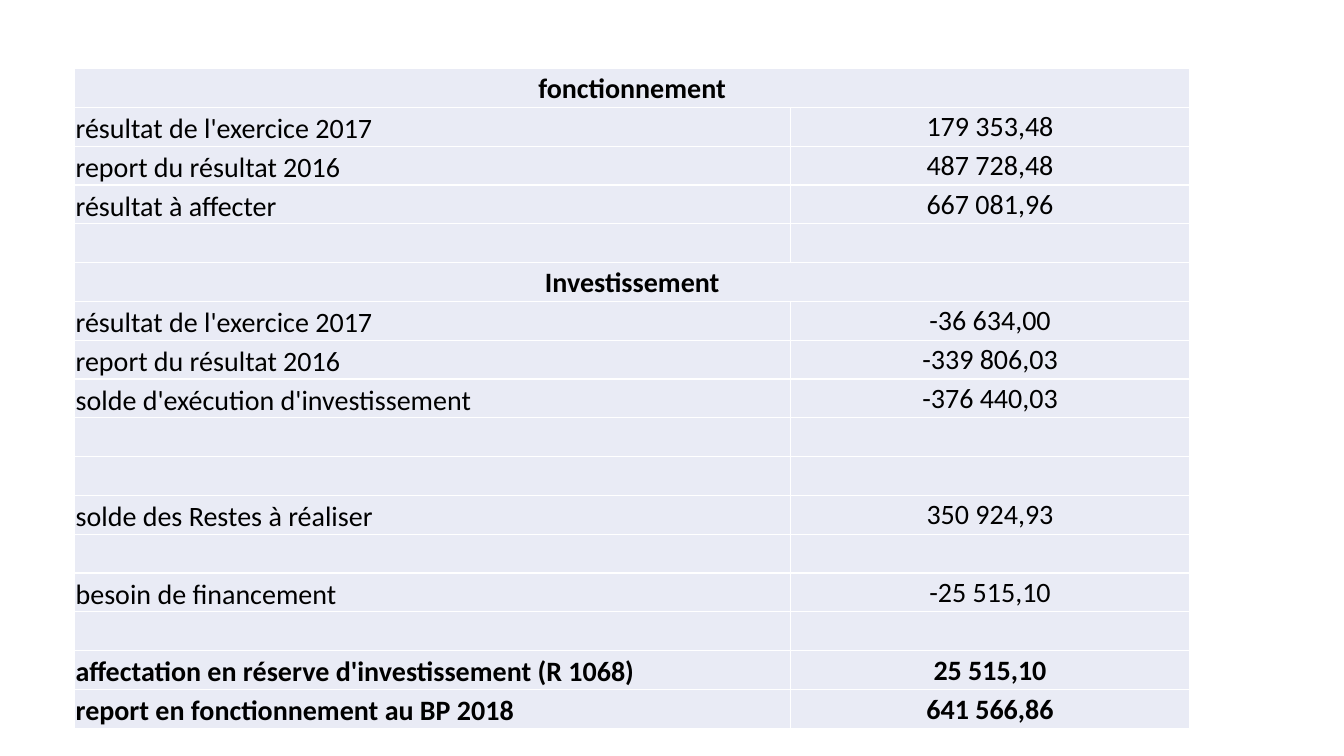
from lxml import etree
from pptx import Presentation
from pptx import util as u
from pptx.dml.color import RGBColor
from pptx.enum import text
from pptx.oxml import ns

COLORS = {"text": "000000", "cell": "E9EBF5", "border": "FFFFFF"}
FONT = "Calibri"
ROW_HEIGHT = 6.55 / 17
COLUMN_WIDTHS = (7.1, 3.96)

# Label, amount, bold; a row with a label and no amount is a section heading.
BUDGET_ROWS = [
    ("fonctionnement", "", True),
    ("résultat de l'exercice 2017", "179 353,48", False),
    ("report du résultat 2016", "487 728,48", False),
    ("résultat à affecter", "667 081,96", False),
    ("", "", False),
    ("Investissement", "", True),
    ("résultat de l'exercice 2017", "-36 634,00", False),
    ("report du résultat 2016", "-339 806,03", False),
    ("solde d'exécution d'investissement", "-376 440,03", False),
    ("", "", False),
    ("", "", False),
    ("solde des Restes à réaliser", "350 924,93", False),
    ("", "", False),
    ("besoin de financement", "-25 515,10", False),
    ("", "", False),
    ("affectation en réserve d'investissement (R 1068)", "25 515,10", True),
    ("report en fonctionnement au BP 2018", "641 566,86", True),
]


def write_text(cell, wording, size=20, bold=False, centred=False):
    """Centred wording sits mid-cell; other wording sits at the bottom left."""
    cell.vertical_anchor = text.MSO_ANCHOR.MIDDLE if centred else text.MSO_ANCHOR.BOTTOM
    paragraph = cell.text_frame.paragraphs[0]
    paragraph.alignment = text.PP_ALIGN.CENTER if centred else text.PP_ALIGN.LEFT
    run = paragraph.add_run()
    run.text = wording
    run.font.name = FONT
    run.font.size = u.Pt(size)
    run.font.bold = bold
    run.font.color.rgb = RGBColor.from_string(COLORS["text"])


def style_cell(cell):
    cell.margin_left = cell.margin_right = cell.margin_top = u.Inches(0.01)
    cell.margin_bottom = 0
    properties = cell._tc.get_or_add_tcPr()
    for side in ("a:lnL", "a:lnR", "a:lnT", "a:lnB"):
        border = etree.SubElement(properties, ns.qn(side), w=str(u.Pt(1)))
        border_fill = etree.SubElement(border, ns.qn("a:solidFill"))
        etree.SubElement(border_fill, ns.qn("a:srgbClr"), val=COLORS["border"])
    cell.fill.solid()
    cell.fill.fore_color.rgb = RGBColor.from_string(COLORS["cell"])


def add_budget_table(slide, left, top):
    row_count = len(BUDGET_ROWS)
    budget = slide.shapes.add_table(
        row_count, len(COLUMN_WIDTHS), u.Inches(left), u.Inches(top),
        u.Inches(sum(COLUMN_WIDTHS)), u.Inches(ROW_HEIGHT * row_count)).table
    budget.first_row = budget.horz_banding = False
    for column, width in zip(budget.columns, COLUMN_WIDTHS):
        column.width = u.Inches(width)
    for index, (label, amount, bold) in enumerate(BUDGET_ROWS):
        budget.rows[index].height = u.Inches(ROW_HEIGHT)
        label_cell, amount_cell = budget.cell(index, 0), budget.cell(index, 1)
        style_cell(label_cell)
        style_cell(amount_cell)
        is_heading = bool(label) and not amount
        if is_heading:
            label_cell.merge(amount_cell)
        if label:
            write_text(label_cell, label, bold=bold, centred=is_heading)
        if amount:
            write_text(amount_cell, amount, bold=bold, centred=True)


def main():
    presentation = Presentation()
    presentation.slide_width = u.Inches(13.33)
    presentation.slide_height = u.Inches(7.5)
    slide = presentation.slides.add_slide(presentation.slide_layouts[6])
    add_budget_table(slide, left=0.74, top=0.68)
    presentation.save("out.pptx")


if __name__ == "__main__":
    main()
